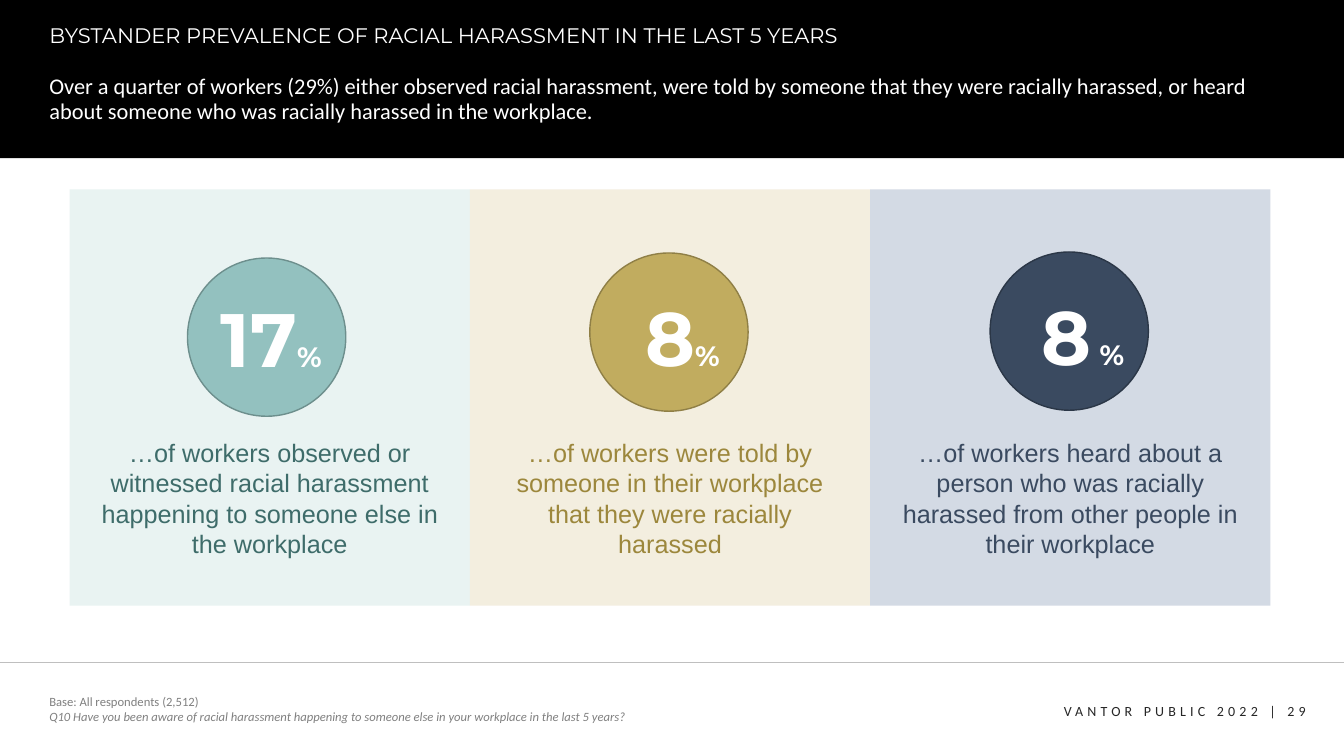
from lxml.etree import SubElement
from pptx import Presentation
from pptx.dml.color import RGBColor
from pptx.enum.shapes import MSO_CONNECTOR as Connector, MSO_SHAPE as Shape
from pptx.enum.text import MSO_ANCHOR as Anchor, MSO_AUTO_SIZE as AutoSize, PP_ALIGN as Align
from pptx.oxml.ns import qn
from pptx.util import Inches, Pt


def add_block(shapes, kind, box, fill, line=None):
    shape = shapes.add_shape(kind, *map(Inches, box))
    shape.shadow.inherit = False
    shape.fill.solid()
    shape.fill.fore_color.rgb = RGBColor.from_string(fill)
    if line:
        shape.line.color.rgb = RGBColor.from_string(line)
        shape.line.width = Pt(1)
    else:
        shape.line.fill.background()


def write_text(shape, paragraphs, color, font, frame={}, layout={}):
    text_frame = shape.text_frame
    frame = {"word_wrap": True, "auto_size": AutoSize.SHAPE_TO_FIT_TEXT,
             "vertical_anchor": Anchor.TOP} | frame
    for name, value in frame.items():
        setattr(text_frame, name, value)
    for number, runs in enumerate(paragraphs):
        paragraph = text_frame.add_paragraph() if number else text_frame.paragraphs[0]
        for name, value in layout.items():
            setattr(paragraph, name, value)
        for text, changes in runs:
            run = paragraph.add_run()
            run.text = text
            run.font.color.rgb = RGBColor.from_string(color)
            for name, value in (font | changes).items():
                setattr(run.font, name, value)


presentation = Presentation()
presentation.slide_width = Inches(13.33)
presentation.slide_height = Inches(7.5)
slide = presentation.slides.add_slide(presentation.slide_layouts[2])
shapes = slide.shapes

add_block(shapes, Shape.RECTANGLE, (0, 0, 13.33, 1.57), "000000")

footer_line = shapes.add_connector(
    Connector.STRAIGHT, 0, Inches(6.57), Inches(13.33), Inches(6.57))
footer_line.line.color.rgb = RGBColor.from_string("BFBFBF")
footer_line.line.width = Pt(0.5)
SubElement(footer_line._element.spPr, qn("a:effectLst"))

page_label = shapes.add_textbox(*map(Inches, (10.08, 6.92, 2.97, 0.27)))
write_text(page_label, [[("VANTOR PUBLIC 2022 | 29", {})]], "262626",
           {"name": "Calibri", "size": Pt(10)}, layout={"alignment": Align.RIGHT})
page_label.text_frame.paragraphs[0].runs[0].font._element.set("spc", "300")

PANEL_LEFT, PANEL_WIDTH, CIRCLE_SIZE = 0.69, 3.97, 1.57
panels = [
    ("E9F3F2", "93C1BF", "6D8F8D", "3E6C6A", (1.86, 2.56), (1.91, 2.85), "17", "%",
     "…of workers observed or witnessed racial harassment happening to someone else in the workplace"),
    ("F3EEDF", "C1AC5F", "8F7F46", "9C873C", (5.85, 2.51), (5.99, 2.84), "8", "%",
     "…of workers were told by someone in their workplace that they were racially harassed"),
    ("D3DAE4", "3A4A60", "2B3747", "3A4A60", (9.82, 2.5), (10, 2.83), "8", " % ",
     "…of workers heard about a person who was racially harassed from other people in their workplace"),
]
for column, (background, fill, outline, text_color, circle_at, figure_at,
             figure, unit, description) in enumerate(panels):
    left = PANEL_LEFT + column * PANEL_WIDTH
    add_block(shapes, Shape.RECTANGLE, (left, 1.88, PANEL_WIDTH, 4.13), background)

    badge = shapes.add_group_shape()
    add_block(badge.shapes, Shape.OVAL, (*circle_at, CIRCLE_SIZE, CIRCLE_SIZE), fill, outline)
    figure_box = badge.shapes.add_textbox(*map(Inches, (*figure_at, 1.56, 1.01)))
    write_text(figure_box, [[(figure, {}), (unit, {"size": Pt(20)})]], "FFFFFF",
               {"name": "Montserrat", "size": Pt(54), "bold": True},
               layout={"alignment": Align.CENTER})

    description_box = shapes.add_textbox(*map(Inches, (left + 0.13, 4.29, 3.71, 1.31)))
    write_text(description_box, [[(description, {})]], text_color,
               {"name": "Arial", "size": Pt(18)}, layout={"alignment": Align.CENTER})

base_note = shapes.add_textbox(*map(Inches, (0.39, 6.83, 7.91, 0.4)))
write_text(base_note, [
    [("Base: All respondents (2,512)", {})],
    [("Q10 Have you been aware of racial harassment happening to someone else "
      "in your workplace in the last 5 years?", {"italic": True})],
], "808080", {"name": "Calibri", "size": Pt(9)}, {"vertical_anchor": Anchor.MIDDLE})

headings = [
    (shapes.title, (0.39, 0.2, 12.55, 0.4), Anchor.TOP, "Montserrat", 15, 0,
     "BYSTANDER PREVALENCE OF RACIAL HARASSMENT IN THE LAST 5 YEARS"),
    (slide.placeholders[1], (0.39, 0.6, 12.2, 0.78), Anchor.MIDDLE, "Calibri", 16, 10,
     "Over a quarter of workers (29%) either observed racial harassment, were told by "
     "someone that they were racially harassed, or heard about someone who was racially "
     "harassed in the workplace."),
]
for placeholder, box, anchor, font_name, size, space, text in headings:
    for name, value in zip(("left", "top", "width", "height"), box):
        setattr(placeholder, name, Inches(value))
    write_text(placeholder, [[(text, {})]], "FFFFFF",
               {"name": font_name, "size": Pt(size), "bold": False},
               {"vertical_anchor": anchor, "auto_size": AutoSize.NONE},
               {"alignment": Align.LEFT, "line_spacing": 0.9, "space_before": Pt(space)})
    shapes._spTree.append(placeholder._element)

presentation.save("out.pptx")
